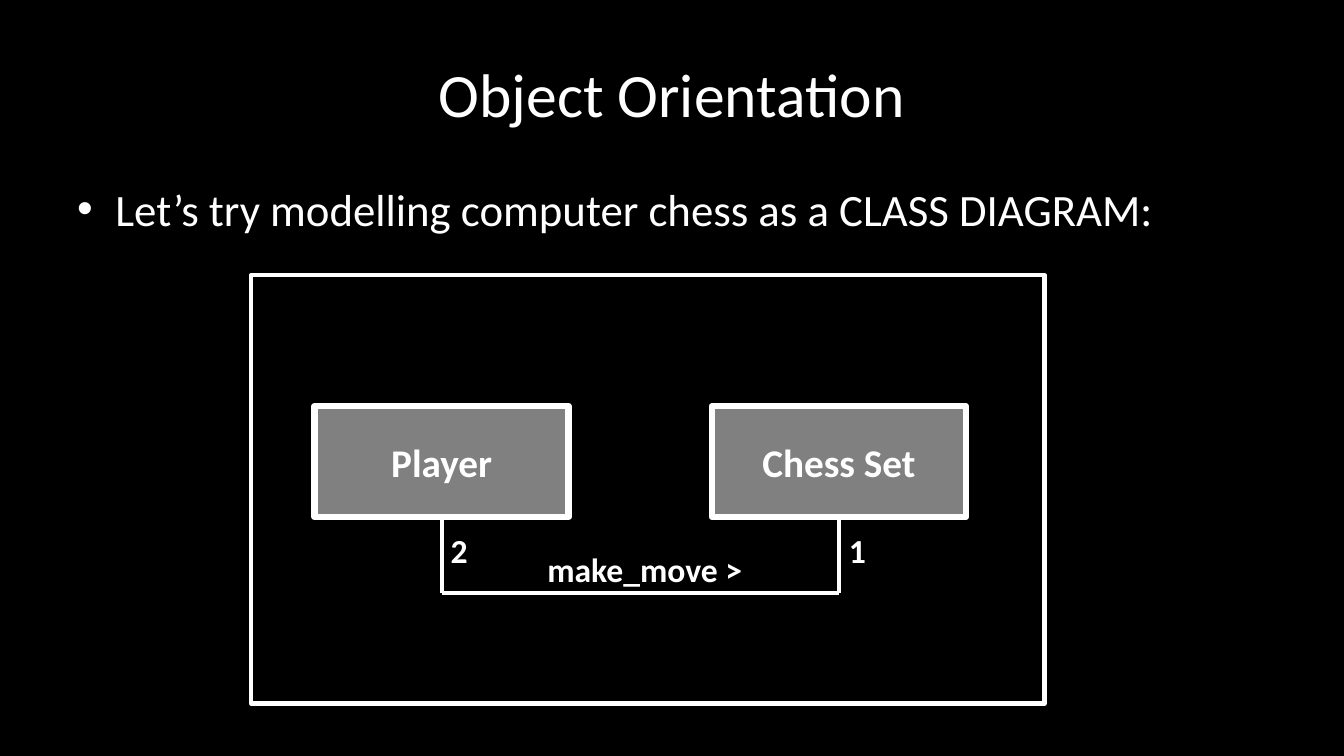
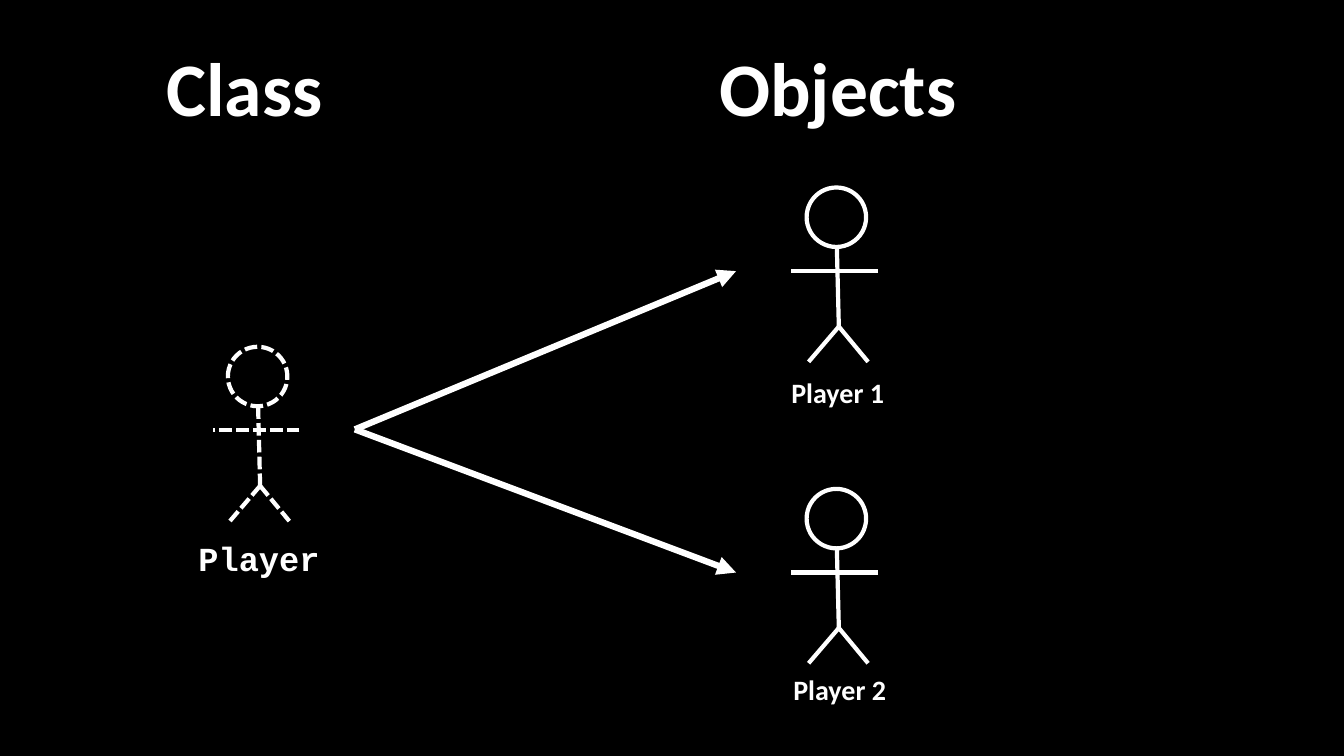
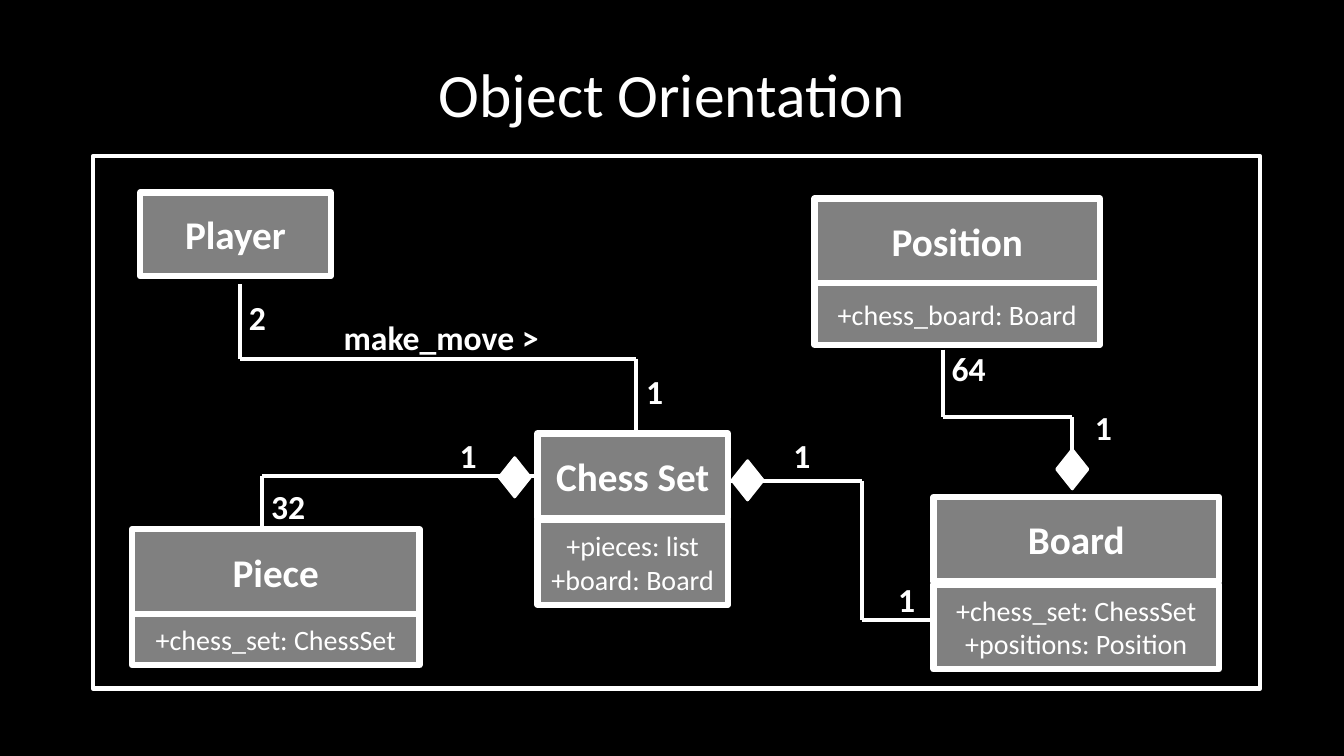
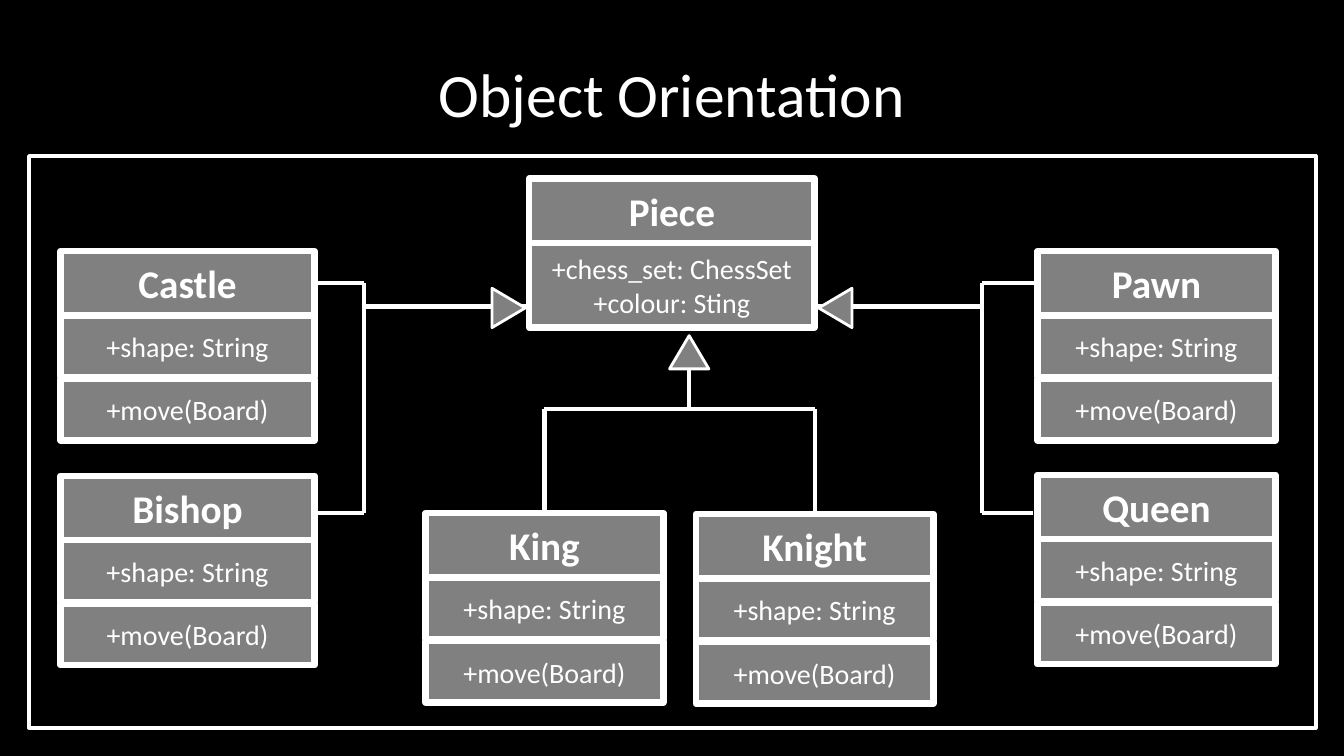
from dataclasses import dataclass
from itertools import pairwise

from pptx import Presentation
from pptx.dml.color import RGBColor
from pptx.enum.dml import MSO_LINE
from pptx.enum.shapes import MSO_CONNECTOR, MSO_SHAPE as Preset
from pptx.enum.text import MSO_ANCHOR, MSO_AUTO_SIZE, PP_ALIGN as Align
from pptx.oxml.ns import qn
from pptx.oxml.xmlchemy import OxmlElement
from pptx.util import Inches, Pt


@dataclass(frozen=True)
class Theme:
    width: float = 13.33
    height: float = 7.5
    back: RGBColor = RGBColor(0, 0, 0)
    ink: RGBColor = RGBColor(255, 255, 255)
    panel: RGBColor = RGBColor(128, 128, 128)
    font: str = "Calibri"
    code_font: str = "Courier New"
    heading: int = 54
    title: int = 44
    bullet: int = 32
    class_name: int = 28
    label: int = 24
    member: int = 20
    hang: float = 0.38
    thin: float = 2
    rule: float = 3
    heavy: float = 4.5


THEME = Theme()
TOP, LEFT, BOTTOM, RIGHT = range(4)
TITLE = "Object Orientation"
PIECE_MEMBERS = [(0, 0.61, ["+shape: String"]), (0.02, 0.61, ["+move(Board)"])]

DIAGRAMS = [
    {
        "bullet": "Let’s try modelling computer chess as a CLASS DIAGRAM:",
        "frame": (2.49, 2.73, 7.87, 4.25),
        "classes": [
            ("Player", 3.12, 4.03, 2.52, 1.1, []),
            ("Chess Set", 7.06, 4.03, 2.52, 1.1, []),
        ],
        "routes": [[("Player", BOTTOM), (4.38, 5.88), (8.32, 5.88), ("Chess Set", BOTTOM)]],
        "labels": [
            ("2", 4.37, 5.21, 0.37),
            ("1", 8.32, 5.21, 0.37),
            ("make_move >", 5.33, 5.4, 2.16),
        ],
    },
    {
        "frame": (0.92, 1.55, 11.58, 5.28),
        "classes": [
            ("Player", 1.39, 1.91, 1.89, 0.83, []),
            ("Chess Set", 5.33, 4.3, 1.89, 0.84,
             [(0.02, 0.84, ["+pieces: list", "+board: Board"])]),
            ("Piece", 1.31, 5.25, 2.85, 0.84, [(0, 0.51, ["+chess_set: ChessSet"])]),
            ("Board", 9.26, 4.93, 2.83, 0.84,
             [(0.03, 0.84, ["+chess_set: ChessSet", "+positions: Position"])]),
            ("Position", 8.08, 1.97, 2.83, 0.84, [(0, 0.61, ["+chess_board: Board"])]),
        ],
        "routes": [
            [(2.38, 2.82), (2.38, 3.56), (6.31, 3.56), (6.31, 4.3)],
            [(2.6, 5.25), (2.6, 4.72), ("Chess Set", LEFT)],
            [(7.22, 4.77), (8.55, 4.77), (8.55, 6.15), (9.26, 6.15)],
            [(9.35, 3.47), (9.35, 4.14), (10.63, 4.14), (10.63, 4.81)],
        ],
        "diamonds": [(4.95, 4.54), (7.26, 4.57), (10.48, 4.46)],
        "labels": [
            ("2", 2.37, 2.9, 0.37),
            ("1", 6.31, 3.63, 0.37),
            ("make_move >", 3.31, 3.09, 2.16),
            ("32", 2.59, 4.77, 0.54),
            ("1", 8.81, 5.69, 0.37),
            ("1", 4.46, 4.27, 0.37),
            ("1", 7.77, 4.27, 0.37),
            ("64", 9.34, 3.4, 0.54),
            ("1", 10.76, 3.99, 0.37),
        ],
    },
    {
        "frame": (0.29, 1.55, 12.76, 5.67),
        "classes": [
            ("Piece", 5.25, 1.77, 2.83, 0.64,
             [(0, 0.84, ["+chess_set: ChessSet", "+colour: Sting"])]),
            ("Pawn", 10.29, 2.49, 2.36, 0.64, PIECE_MEMBERS),
            ("Queen", 10.29, 4.71, 2.36, 0.64, PIECE_MEMBERS),
            ("Castle", 0.6, 2.49, 2.52, 0.64, PIECE_MEMBERS),
            ("Bishop", 0.6, 4.72, 2.52, 0.64, PIECE_MEMBERS),
            ("Knight", 6.9, 5.1, 2.36, 0.64, PIECE_MEMBERS),
            ("King", 4.22, 5.09, 2.36, 0.64, PIECE_MEMBERS),
        ],
        "routes": [
            [("King", TOP), (5.4, 4.06), (8.08, 4.06), ("Knight", TOP)],
            [(6.83, 4.06), (6.83, 3.4)],
            [("Castle", RIGHT), (3.61, 2.81), (3.61, 5.09), (3.12, 5.09)],
            [(3.61, 3.04), (5.25, 3.04)],
            [("Pawn", LEFT), (9.74, 2.81), (9.74, 5.09), (10.25, 5.09)],
            [(9.74, 3.04), (8.08, 3.04)],
        ],
        "triangles": [(6.64, 3.33, 0), (4.85, 2.89, 90), (8.09, 2.89, 270)],
    },
]

HEADINGS = [("Class", 1.54, 0.36, 1.77), ("Objects", 7.02, 0.36, 2.58)]
FIGURES = [(2.26, 3.44, MSO_LINE.SQUARE_DOT), (8, 1.86, None), (8, 4.85, None)]
HEAD = 0.59
NECK, HIP = (0.3, HEAD), (0.32, 1.38)
LIMBS = [(NECK, HIP), (HIP, (0.61, 1.73)), (HIP, (0.02, 1.73)), ((0.71, 0.83), (-0.15, 0.83))]
FIGURE_NAMES = [
    ("Player", 1.87, 5.29, 1.41, THEME.label, THEME.code_font),
    ("Player 1", 7.75, 3.68, 1.13, THEME.member, THEME.font),
    ("Player 2", 7.77, 6.62, 1.13, THEME.member, THEME.font),
]
ARROW_START = (3.52, 4.26)
ARROW_ENDS = [(7.3, 2.69), (7.3, 5.68)]


def mark_bullet(paragraph):
    properties = paragraph._p.get_or_add_pPr()
    properties.set("marL", str(Inches(THEME.hang)))
    properties.set("indent", str(-Inches(THEME.hang)))
    for tag, key, value in [("a:buFont", "typeface", "Arial"), ("a:buChar", "char", "•")]:
        mark = OxmlElement(tag)
        mark.set(key, value)
        properties.append(mark)


def write(frame, lines, size, bold=False, align=Align.CENTER, font=THEME.font, bulleted=False):
    frame.text = "\n".join(lines)
    for paragraph in frame.paragraphs:
        if bulleted:
            mark_bullet(paragraph)
        paragraph.alignment = align
        paragraph.font.name = font
        paragraph.font.size = Pt(size)
        paragraph.font.bold = bold
        paragraph.font.color.rgb = THEME.ink


def outline(line, weight, dash=None):
    line.color.rgb = THEME.ink
    line.width = Pt(weight)
    if dash is not None:
        line.dash_style = dash


def add_box(slide, area, preset=Preset.RECTANGLE, fill=None, weight=THEME.rule, dash=None):
    box = slide.shapes.add_shape(preset, *map(Inches, area))
    box.shadow.inherit = False
    if fill is None:
        box.fill.background()
    else:
        box.fill.solid()
        box.fill.fore_color.rgb = fill
    outline(box.line, weight, dash)
    return box


def add_line(slide, start, end, weight=THEME.rule, dash=None, arrow=False):
    line = slide.shapes.add_connector(MSO_CONNECTOR.STRAIGHT, *map(Inches, (*start, *end)))
    outline(line.line, weight, dash)
    properties = line.element.spPr
    if arrow:
        tip = OxmlElement("a:tailEnd")
        tip.set("type", "triangle")
        properties.find(qn("a:ln")).append(tip)
    properties.append(OxmlElement("a:effectLst"))
    return line


def add_route(slide, points, boxes):
    for start, end in pairwise(points):
        joined_start, joined_end = start[0] in boxes, end[0] in boxes
        line = add_line(slide, end if joined_start else start, start if joined_end else end)
        if joined_start:
            line.begin_connect(boxes[start[0]], start[1])
        if joined_end:
            line.end_connect(boxes[end[0]], end[1])


def add_label(slide, text, left, top, width, size=THEME.label, font=THEME.font, align=Align.LEFT):
    height = size / 60 + 0.1
    label = slide.shapes.add_textbox(*map(Inches, (left, top, width, height)))
    label.text_frame.word_wrap = False
    label.text_frame.auto_size = MSO_AUTO_SIZE.SHAPE_TO_FIT_TEXT
    write(label.text_frame, [text], size, True, align, font)


def add_wide_text(slide, top, height):
    area = (0.05 * THEME.width, top * THEME.height, 0.9 * THEME.width, height * THEME.height)
    frame = slide.shapes.add_textbox(*map(Inches, area)).text_frame
    frame.word_wrap = True
    return frame


def add_title(slide):
    frame = add_wide_text(slide, 0.04, 1 / 6)
    frame.vertical_anchor = MSO_ANCHOR.MIDDLE
    write(frame, [TITLE], THEME.title)


def add_bullet(slide, text):
    frame = add_wide_text(slide, 7 / 30, 0.66)
    write(frame, [text], THEME.bullet, align=Align.LEFT, bulleted=True)


def add_class(slide, name, left, top, width, height, members):
    compartments = [(0, height, [name]), *members]
    boxes = []
    for gap, depth, lines in compartments:
        top += gap
        box = add_box(slide, (left, top, width, depth), fill=THEME.panel, weight=THEME.heavy)
        box.text_frame.vertical_anchor = MSO_ANCHOR.MIDDLE
        is_name = not boxes
        write(box.text_frame, lines, THEME.class_name if is_name else THEME.member, is_name)
        boxes.append(box)
        top += depth
    return boxes[0]


def build_diagram(slide, diagram):
    add_title(slide)
    if "bullet" in diagram:
        add_bullet(slide, diagram["bullet"])
    add_box(slide, diagram["frame"])
    boxes = {entry[0]: add_class(slide, *entry) for entry in diagram["classes"]}
    for route in diagram["routes"]:
        add_route(slide, route, boxes)
    for left, top in diagram.get("diamonds", []):
        add_box(slide, (left, top, 0.31, 0.39), Preset.DIAMOND, THEME.ink, THEME.thin)
    for left, top, turn in diagram.get("triangles", []):
        triangle = add_box(slide, (left, top, 0.39, 0.33), Preset.ISOSCELES_TRIANGLE,
                           THEME.panel, THEME.thin)
        triangle.rotation = turn
    for label in diagram.get("labels", []):
        add_label(slide, *label)


def build_instances(slide):
    for left, top, dash in FIGURES:
        add_box(slide, (left, top, HEAD, HEAD), Preset.OVAL, dash=dash)
        for limb in LIMBS:
            start, end = [(left + x, top + y) for x, y in limb]
            add_line(slide, start, end, dash=dash)
    for name in FIGURE_NAMES:
        add_label(slide, *name)
    for end in ARROW_ENDS:
        add_line(slide, ARROW_START, end, THEME.heavy, arrow=True)
    for heading in HEADINGS:
        add_label(slide, *heading, size=THEME.heading, align=Align.CENTER)


def main():
    deck = Presentation()
    deck.slide_width, deck.slide_height = Inches(THEME.width), Inches(THEME.height)
    backdrop = deck.slide_master.background.fill
    backdrop.solid()
    backdrop.fore_color.rgb = THEME.back
    blank = deck.slide_layouts[6]
    opening, *later = DIAGRAMS
    build_diagram(deck.slides.add_slide(blank), opening)
    build_instances(deck.slides.add_slide(blank))
    for diagram in later:
        build_diagram(deck.slides.add_slide(blank), diagram)
    deck.save("out.pptx")


if __name__ == "__main__":
    main()
